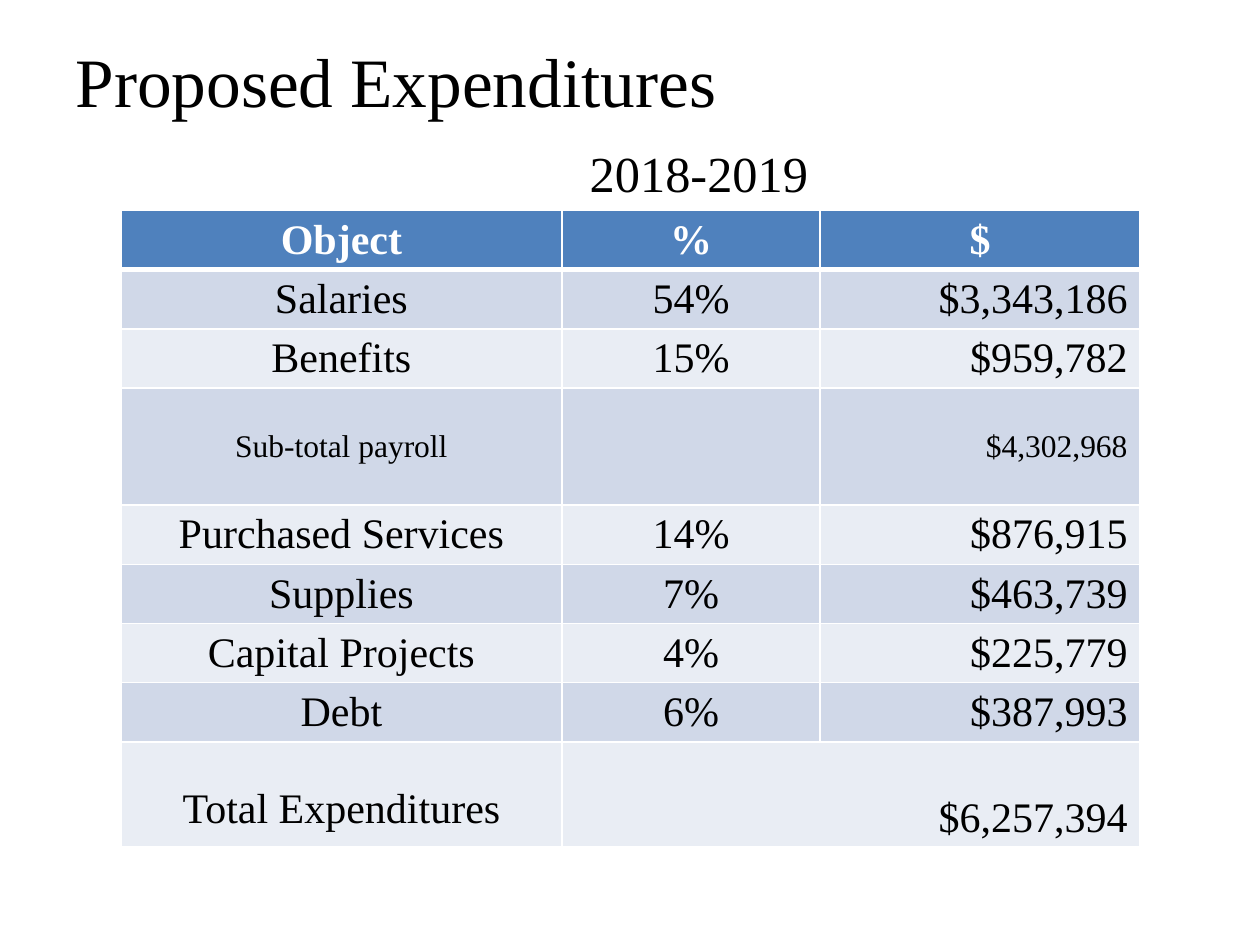
"""Build the proposed expenditures slide with its budget table."""
import pptx
import pptx.dml.color
import pptx.enum.text
import pptx.oxml
import pptx.oxml.ns
import pptx.util

Inches, Pt = pptx.util.Inches, pptx.util.Pt
ALIGN, ANCHOR = pptx.enum.text.PP_ALIGN, pptx.enum.text.MSO_ANCHOR
FONT = "Times New Roman"
BLACK, WHITE, HEADER = "000000", "FFFFFF", "4F81BD"
BANDS = ("E9EDF4", "D0D8E8")

TITLE = [("Proposed Expenditures", 39.6, 0, 0), ("2018-2019", 28.8, 11.5, 4.08)]
COLUMNS = [(3.5, ALIGN.CENTER), (2.05, ALIGN.CENTER), (2.54, ALIGN.RIGHT)]
ROWS = [
    ("Object", "%", "$"),
    ("Salaries", "54%", "$3,343,186"),
    ("Benefits", "15%", "$959,782"),
    ("Sub-total payroll", "", "$4,302,968"),
    ("Purchased Services", "14%", "$876,915"),
    ("Supplies", "7%", "$463,739"),
    ("Capital Projects", "4%", "$225,779"),
    ("Debt", "6%", "$387,993"),
    ("Total Expenditures", "$6,257,394", ""),
]
SUBTOTAL, TOTAL = 3, len(ROWS) - 1
ROW_HEIGHT = 0.47
TALL_ROWS = {SUBTOTAL: 0.93, TOTAL: 0.83}


def rgb(value):
    """Return the colour for a hex string."""
    return pptx.dml.color.RGBColor.from_string(value)


def style(p, size, color, align, bold=False):
    """Format one paragraph."""
    p.alignment = align
    p.font.name, p.font.size, p.font.bold = FONT, Pt(size), bold
    p.font.color.rgb = rgb(color)


def add_borders(cell, bottom):
    """Draw white lines around a cell, with the given bottom width in points."""
    tc_pr = cell._tc.get_or_add_tcPr()
    for side, width in (("L", 1), ("R", 1), ("T", 1), ("B", bottom)):
        tc_pr.append(pptx.oxml.parse_xml(
            f'<a:ln{side} {pptx.oxml.ns.nsdecls("a")} w="{Pt(width)}"><a:solidFill>'
            f'<a:srgbClr val="{WHITE}"/></a:solidFill></a:ln{side}>'))


def add_title(s):
    """Place the title and the year below it."""
    sp = s.shapes.title
    sp.left, sp.top, sp.width, sp.height = map(Inches, (0.5, 0.33, 9, 1.25))
    tf = sp.text_frame
    tf.vertical_anchor = ANCHOR.MIDDLE
    tf.text = "\n".join(text for text, *_ in TITLE)
    for p, (_, size, before, indent) in zip(tf.paragraphs, TITLE):
        style(p, size, BLACK, ALIGN.LEFT)
        p.space_before = Pt(before)
        p._p.get_or_add_pPr().set("marL", str(Inches(indent)))


def fill_cell(cell, text, row, align):
    """Write and format one table cell."""
    header = row == 0
    cell.text = text
    cell.margin_top = cell.margin_bottom = Inches(0.04)
    cell.vertical_anchor = ANCHOR.BOTTOM if row == TOTAL else ANCHOR.MIDDLE
    style(cell.text_frame.paragraphs[0], 18 if row == SUBTOTAL else 24,
          WHITE if header else BLACK, ALIGN.CENTER if header else align, header)
    add_borders(cell, 3 if header else 1)
    cell.fill.solid()
    cell.fill.fore_color.rgb = rgb(HEADER if header else BANDS[row % 2])


def add_budget(s):
    """Add the budget table."""
    heights = [TALL_ROWS.get(i, ROW_HEIGHT) for i in range(len(ROWS))]
    width = sum(w for w, _ in COLUMNS)
    table = s.shapes.add_table(len(ROWS), len(COLUMNS), Inches(0.96), Inches(1.67),
                               Inches(width), Inches(sum(heights))).table
    for column, (w, _) in zip(table.columns, COLUMNS):
        column.width = Inches(w)
    for i, (texts, height) in enumerate(zip(ROWS, heights)):
        table.rows[i].height = Inches(height)
        for j, (text, (_, align)) in enumerate(zip(texts, COLUMNS)):
            fill_cell(table.cell(i, j), text, i, align)
    total = table.cell(TOTAL, 1)
    total.merge(table.cell(TOTAL, 2))
    total.text_frame.paragraphs[0].alignment = ALIGN.RIGHT
    table.cell(TOTAL, 0).margin_bottom = Inches(0.11)


def main():
    """Build and save the presentation."""
    prs = pptx.Presentation()
    prs.slide_width, prs.slide_height = Inches(10), Inches(7.5)
    s = prs.slides.add_slide(prs.slide_layouts[5])
    add_title(s)
    add_budget(s)
    prs.save("out.pptx")


if __name__ == "__main__":
    main()
